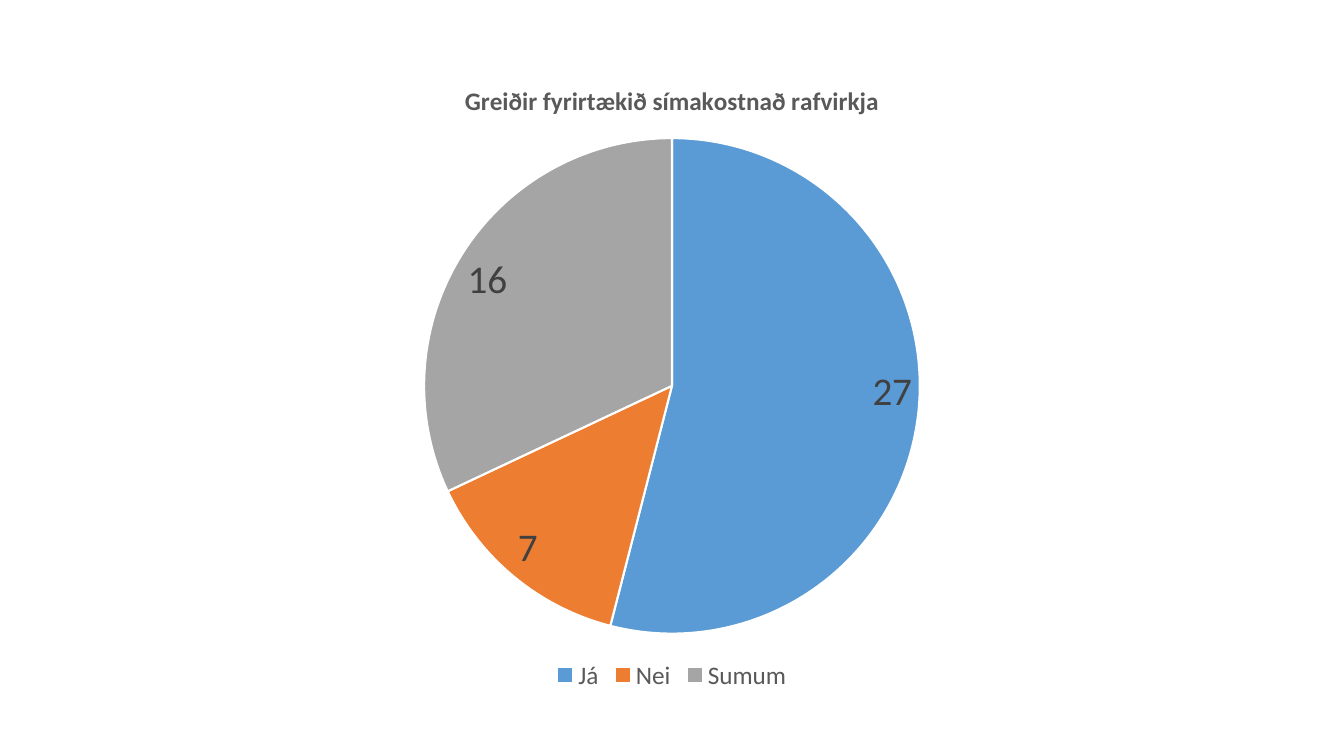
from pptx import Presentation, util as u
from pptx.chart.data import CategoryChartData
from pptx.dml.color import RGBColor
from pptx.enum import chart as ch

WIDE, HIGH = u.Inches(13.33), u.Inches(7.5)
GREY = "595959"
SLICES = [("Já", 27, "5B9BD5"), ("Nei", 7, "ED7D31"), ("Sumum", 16, "A5A5A5")]


def tint(color, code):
    color.rgb = RGBColor.from_string(code)


def style(font, size, code, bold=False):
    font.name = "Calibri"
    font.size = u.Pt(size)
    font.bold = bold
    tint(font.color, code)


def add_pie(slide, left, top, width, height):
    names, counts, _ = zip(*SLICES)
    data = CategoryChartData()
    data.categories = names
    data.add_series("Series 1", counts)
    frame = slide.shapes.add_chart(
        ch.XL_CHART_TYPE.PIE, int(WIDE * left), int(HIGH * top),
        int(WIDE * width), int(HIGH * height), data)
    return frame.chart


def add_title(chart, words):
    chart.has_title = True
    chart.chart_title.include_in_layout = False
    para = chart.chart_title.text_frame.paragraphs[0]
    para.text = words
    style(para.font, 18, GREY, True)


def add_legend(chart):
    chart.has_legend = True
    chart.legend.position = ch.XL_LEGEND_POSITION.BOTTOM
    chart.legend.include_in_layout = False
    style(chart.legend.font, 18, GREY)


def paint(plot):
    plot.vary_by_categories = True
    for spot, (_, _, code) in enumerate(SLICES):
        form = plot.series[0].points[spot].format
        form.fill.solid()
        tint(form.fill.fore_color, code)
        tint(form.line.color, "FFFFFF")
        form.line.width = u.Pt(1.5)


def add_labels(plot):
    plot.has_data_labels = True
    labels = plot.data_labels
    labels.show_value = True
    labels.show_percentage = False
    labels.position = ch.XL_LABEL_POSITION.INSIDE_END
    style(labels.font, 28, "404040")


def main():
    deck = Presentation()
    deck.slide_width, deck.slide_height = WIDE, HIGH
    slide = deck.slides.add_slide(deck.slide_layouts[6])
    chart = add_pie(slide, 0.09, 0.08, 0.82, 0.84)
    style(chart.font, 10, "000000")
    add_title(chart, "Greiðir fyrirtækið símakostnað rafvirkja")
    add_legend(chart)
    paint(chart.plots[0])
    add_labels(chart.plots[0])
    deck.save("out.pptx")


if __name__ == "__main__":
    main()
